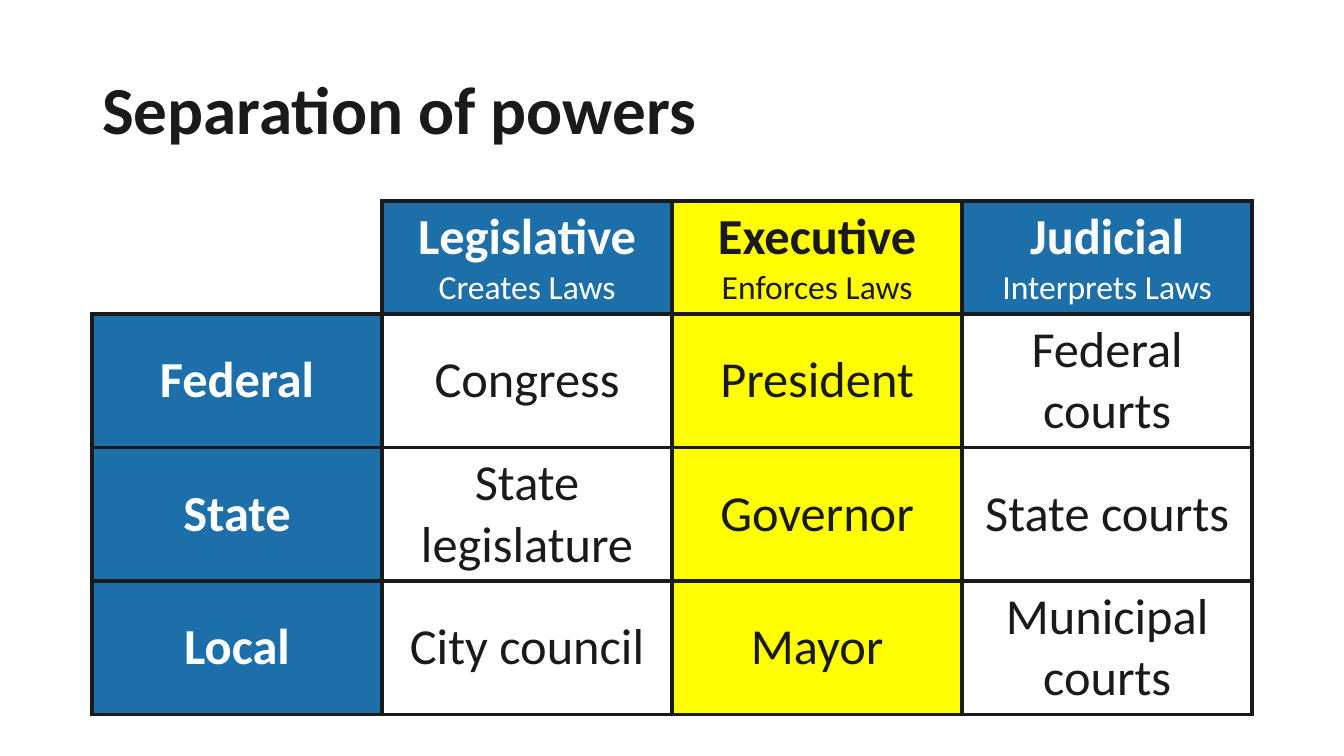
import pptx
import pptx.dml.color
import pptx.enum.text
import pptx.oxml.ns
import pptx.util
import lxml.etree
from dataclasses import dataclass

EMU_PER_PX = 914400 / 100.8


@dataclass(frozen=True)
class Theme:
    font: str = "Calibri"
    ink: str = "1A1A1A"
    white: str = "FFFFFF"
    blue: str = "1D6FA9"
    yellow: str = "FFFF00"
    title_size: int = 48
    cell_size: int = 36
    caption_size: int = 24
    border: int = 3
    thin_border: int = 1


THEME = Theme()

BRANCHES = [
    ("Legislative", "Creates Laws"),
    ("Executive", "Enforces Laws"),
    ("Judicial", "Interprets Laws"),
]
LEVELS = [
    ("Federal", "Congress", "President", "Federal courts"),
    ("State", "State legislature", "Governor", "State courts"),
    ("Local", "City council", "Mayor", "Municipal courts"),
]
EXECUTIVE_COLUMN = 2
COLUMN_WIDTH = 290
HEADER_HEIGHT = 113
LEVEL_HEIGHT = 133


def px(length):
    return pptx.util.Emu(round(length * EMU_PER_PX))


def rgb(colour):
    return pptx.dml.color.RGBColor.from_string(colour)


def style_paragraph(para, size, colour, bold):
    para.font.name = THEME.font
    para.font.size = pptx.util.Pt(size)
    para.font.color.rgb = rgb(colour)
    para.font.bold = bold


def add_title(page, text):
    title = page.shapes.title
    title.left, title.top, title.width, title.height = px(92), px(40), px(1159), px(146)
    title.text_frame.text = text
    title.text_frame.word_wrap = True
    title.text_frame.vertical_anchor = pptx.enum.text.MSO_ANCHOR.MIDDLE
    para = title.text_frame.paragraphs[0]
    para.alignment = pptx.enum.text.PP_ALIGN.LEFT
    para.line_spacing = 0.9
    style_paragraph(para, THEME.title_size, THEME.ink, True)


def set_border(cell, side, colour, width):
    properties = cell._tc.get_or_add_tcPr()
    qn = pptx.oxml.ns.qn
    line = lxml.etree.SubElement(properties, qn(f"a:ln{side}"), w=str(pptx.util.Pt(width)))
    fill = lxml.etree.SubElement(line, qn("a:solidFill"))
    lxml.etree.SubElement(fill, qn("a:srgbClr"), val=colour)


def format_cell(cell, lines, fill, colour, bold, is_corner):
    # Borders come before the fill in the cell properties
    for side in "LRTB":
        if is_corner and side in "LT":
            set_border(cell, side, THEME.white, THEME.thin_border)
        else:
            set_border(cell, side, THEME.ink, THEME.border)
    cell.fill.solid()
    cell.fill.fore_color.rgb = rgb(fill)
    cell.vertical_anchor = pptx.enum.text.MSO_ANCHOR.MIDDLE

    # The first line is the name, the second its caption
    cell.text_frame.text = "\n".join(lines)
    for index, para in enumerate(cell.text_frame.paragraphs):
        para.alignment = pptx.enum.text.PP_ALIGN.CENTER
        size = THEME.caption_size if index else THEME.cell_size
        style_paragraph(para, size, colour, bold and index == 0)


def cell_colours(row, column):
    if row == 0 and column == 0:
        return THEME.white, THEME.ink
    if column == EXECUTIVE_COLUMN:
        return THEME.yellow, THEME.ink
    if row == 0 or column == 0:
        return THEME.blue, THEME.white
    return THEME.white, THEME.ink


def add_powers_table(page):
    rows = [[(), *BRANCHES]] + [[(name,) for name in level] for level in LEVELS]
    heights = [HEADER_HEIGHT] + [LEVEL_HEIGHT] * len(LEVELS)
    columns = len(rows[0])
    frame = page.shapes.add_table(
        len(rows), columns, px(92), px(201), px(COLUMN_WIDTH * columns), px(sum(heights))
    )
    table = frame.table
    table.first_row = False
    table.horz_banding = False
    for column in table.columns:
        column.width = px(COLUMN_WIDTH)
    for row, height in enumerate(heights):
        table.rows[row].height = px(height)
        for column, lines in enumerate(rows[row]):
            fill, colour = cell_colours(row, column)
            is_header = row == 0 or column == 0
            is_corner = row == 0 and column == 0
            format_cell(table.cell(row, column), lines, fill, colour, is_header, is_corner)


def main():
    deck = pptx.Presentation()
    deck.slide_width = pptx.util.Inches(13.33)
    deck.slide_height = pptx.util.Inches(7.5)
    page = deck.slides.add_slide(deck.slide_layouts[5])
    page.background.fill.solid()
    page.background.fill.fore_color.rgb = rgb(THEME.white)
    add_title(page, "Separation of powers")
    add_powers_table(page)
    deck.save("out.pptx")


if __name__ == "__main__":
    main()
